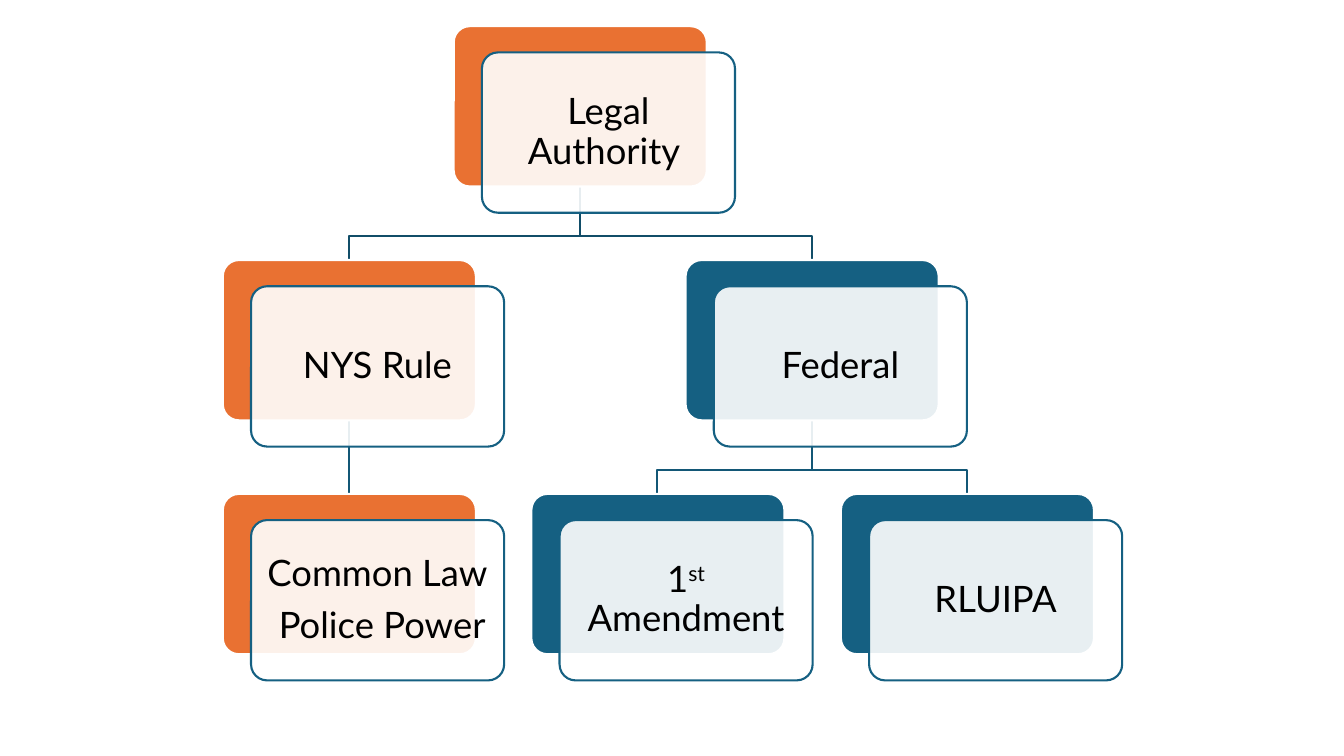
"""Build a slide with a three-level chart of legal authority."""
from dataclasses import dataclass

from lxml.etree import SubElement
from pptx import Presentation
from pptx.dml.color import RGBColor
from pptx.enum.shapes import MSO_CONNECTOR as Connector, MSO_SHAPE as Shape
from pptx.enum.text import MSO_ANCHOR as Anchor, PP_ALIGN as Align
from pptx.oxml.ns import qn
from pptx.util import Pt

PX = 9144
SLIDE_WIDTH, SLIDE_HEIGHT = 1333, 750
CARD_WIDTH, CARD_HEIGHT = 251, 159
CHART_LEFT, CHART_TOP = 221, 26
CHART_SPAN, SLOTS = 613, 8
ROW_STEP = 232
FRONT_SHIFT_X, FRONT_SHIFT_Y = 28, 26
TEXT_INSET, TEXT_MARGIN = 5, 11
ELBOW_DROP = 49


@dataclass(frozen=True)
class Theme:
    font: str = "Lato"
    text_size: float = 26
    space_after: float = 9.1
    line_spacing: float = 0.9
    line_width: float = 1.5
    text: str = "000000"
    paper: str = "FFFFFF"
    orange: str = "E97132"
    blue: str = "156082"
    root_link: str = "114D68"
    child_link: str = "135776"


THEME = Theme()


@dataclass(frozen=True)
class Run:
    text: str
    superscript: bool = False


@dataclass(frozen=True)
class Node:
    slot: int
    row: int
    fill: str
    paragraphs: tuple[tuple[Run, ...], ...]

    @property
    def left(self) -> int:
        return CHART_LEFT + CHART_SPAN * self.slot // SLOTS

    @property
    def top(self) -> int:
        return CHART_TOP + ROW_STEP * self.row

    @property
    def centre(self) -> int:
        return self.left + CARD_WIDTH // 2

    @property
    def bottom(self) -> int:
        return self.top + CARD_HEIGHT


@dataclass(frozen=True)
class Link:
    parent: Node
    child: Node
    color: str


ROOT = Node(3, 0, THEME.orange, ((Run("Legal Authority "),),))
STATE = Node(0, 1, THEME.orange, ((Run("NYS Rule"),),))
COMMON_LAW = Node(0, 2, THEME.orange, ((Run("Common Law"),), (Run(" Police Power"),)))
FEDERAL = Node(6, 1, THEME.blue, ((Run("Federal"),),))
AMENDMENT = Node(4, 2, THEME.blue, ((Run("1"), Run("st", True), Run(" Amendment")),))
LAND_USE_ACT = Node(8, 2, THEME.blue, ((Run("RLUIPA"),),))

NODES = (ROOT, STATE, COMMON_LAW, FEDERAL, AMENDMENT, LAND_USE_ACT)
LINKS = (
    Link(FEDERAL, LAND_USE_ACT, THEME.child_link),
    Link(FEDERAL, AMENDMENT, THEME.child_link),
    Link(ROOT, FEDERAL, THEME.root_link),
    Link(STATE, COMMON_LAW, THEME.child_link),
    Link(ROOT, STATE, THEME.root_link),
)


def style_line(shape, color: str) -> None:
    """Give a shape or connector its outline."""
    shape.line.color.rgb = RGBColor.from_string(color)
    shape.line.width = Pt(THEME.line_width)


def add_link(slide, link: Link) -> None:
    """Draw a straight or elbowed line from parent to child."""
    start_x, start_y = link.parent.centre, link.parent.bottom
    end_x, end_y = link.child.centre, link.child.top
    if start_x == end_x:
        line = slide.shapes.add_connector(
            Connector.STRAIGHT, start_x * PX, start_y * PX, end_x * PX, end_y * PX)
        SubElement(line._element.spPr, qn("a:effectLst"))
    else:
        elbow_y = start_y + ELBOW_DROP
        builder = slide.shapes.build_freeform(start_x, start_y, scale=PX)
        builder.add_line_segments(
            [(start_x, elbow_y), (end_x, elbow_y), (end_x, end_y)], close=False)
        line = builder.convert_to_shape()
        line.fill.background()
        line.shadow.inherit = False
    style_line(line, link.color)


def add_card(slide, left: int, top: int, fill: str, outline: str, opacity: int = 100) -> None:
    """Draw one rounded card."""
    card = slide.shapes.add_shape(
        Shape.ROUNDED_RECTANGLE, left * PX, top * PX, CARD_WIDTH * PX, CARD_HEIGHT * PX)
    card.adjustments[0] = 0.1
    card.shadow.inherit = False
    card.fill.solid()
    card.fill.fore_color.rgb = RGBColor.from_string(fill)
    style_line(card, outline)
    if opacity < 100:
        color = card._element.spPr.find(qn("a:solidFill")).find(qn("a:srgbClr"))
        SubElement(color, qn("a:alpha"), val=str(opacity * 1000))


def add_text(slide, paragraphs: tuple[tuple[Run, ...], ...], *, left: int, top: int,
             width: int, height: int, size: float = THEME.text_size,
             color: str = THEME.text, align: Align = Align.CENTER) -> None:
    """Place formatted paragraphs in a wrapping text box."""
    box = slide.shapes.add_textbox(left * PX, top * PX, width * PX, height * PX)
    frame = box.text_frame
    frame.word_wrap = True
    frame.vertical_anchor = Anchor.MIDDLE
    frame.margin_left = frame.margin_right = TEXT_MARGIN * PX
    frame.margin_top = frame.margin_bottom = TEXT_MARGIN * PX
    for index, runs in enumerate(paragraphs):
        paragraph = frame.add_paragraph() if index else frame.paragraphs[0]
        paragraph.alignment = align
        paragraph.line_spacing = THEME.line_spacing
        paragraph.space_after = Pt(THEME.space_after)
        for item in runs:
            run = paragraph.add_run()
            run.text = item.text
            run.font.name = THEME.font
            run.font.size = Pt(size)
            run.font.color.rgb = RGBColor.from_string(color)
            if item.superscript:
                run._r.get_or_add_rPr().set("baseline", "30000")


def add_node(slide, node: Node) -> None:
    """Draw the coloured card, its translucent front and the label."""
    front_left, front_top = node.left + FRONT_SHIFT_X, node.top + FRONT_SHIFT_Y
    add_card(slide, node.left, node.top, node.fill, THEME.paper)
    add_card(slide, front_left, front_top, THEME.paper, THEME.blue, opacity=90)
    add_text(slide, node.paragraphs, left=front_left + TEXT_INSET, top=front_top + TEXT_INSET,
             width=CARD_WIDTH - 2 * TEXT_INSET, height=CARD_HEIGHT - 2 * TEXT_INSET)


def main() -> None:
    """Create and save the presentation."""
    presentation = Presentation()
    presentation.slide_width = SLIDE_WIDTH * PX
    presentation.slide_height = SLIDE_HEIGHT * PX
    slide = presentation.slides.add_slide(presentation.slide_layouts.get_by_name("Blank"))
    for link in LINKS:
        add_link(slide, link)
    for node in NODES:
        add_node(slide, node)
    presentation.save("out.pptx")


if __name__ == "__main__":
    main()
